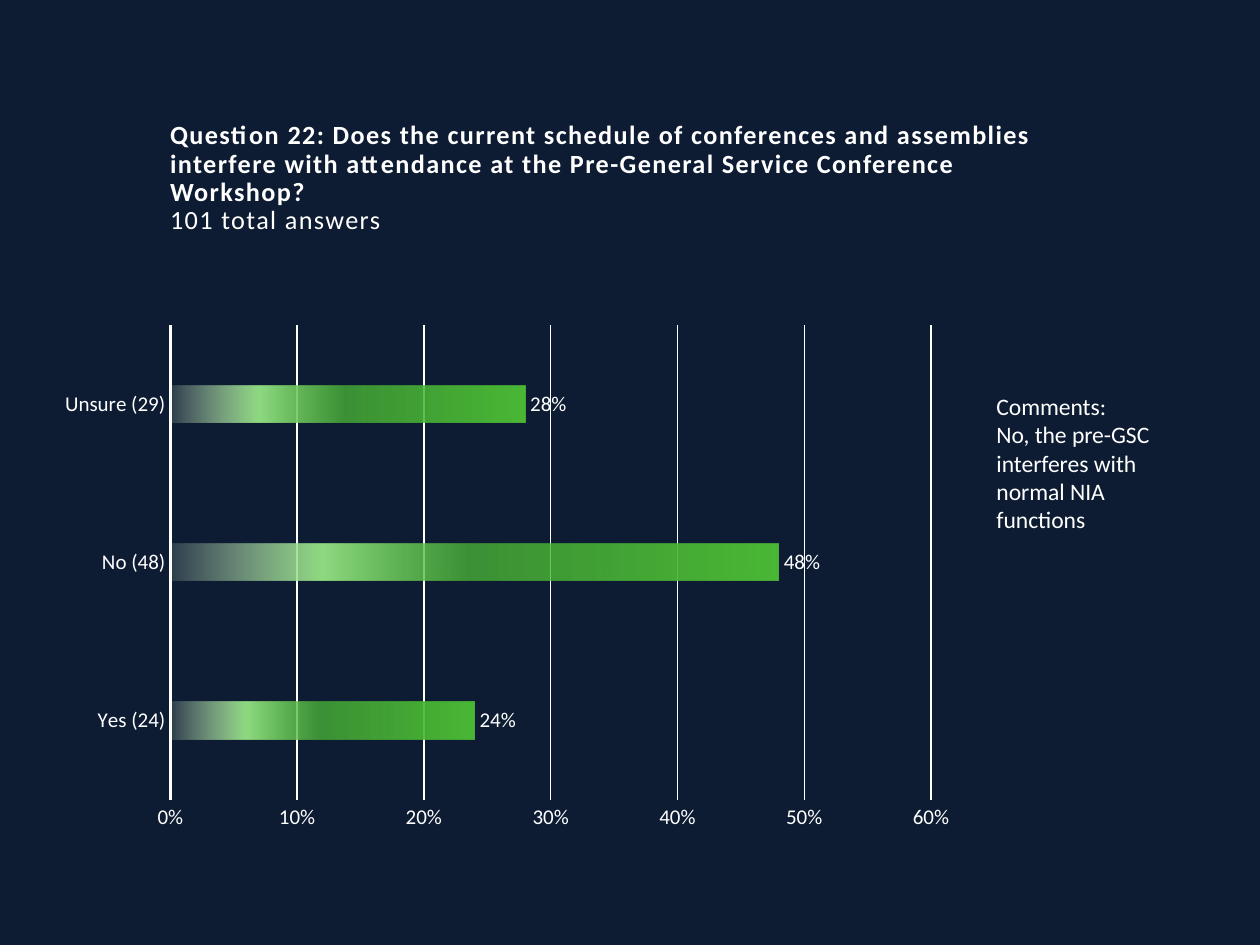
"""Build a survey slide with a question title, a bar chart of answers and comments."""
import copy
from dataclasses import dataclass

import lxml.etree
import pptx
import pptx.chart.data
import pptx.dml.color
import pptx.enum.chart
import pptx.enum.text
import pptx.oxml
import pptx.oxml.ns
import pptx.util

QUESTION = ("Question 22: Does the current schedule of conferences and assemblies "
            "interfere with attendance at the Pre-General Service Conference Workshop? ")
TOTAL = "101 total answers"
ANSWERS = [("Yes (24)", 0.24), ("No (48)", 0.48), ("Unsure (29)", 0.28)]
COMMENTS = ["Comments:", "No, the pre-GSC interferes with normal NIA functions"]

WIDTH, HEIGHT = 10, 7.5
TITLE_BOX = (0.125, 0.056, 0.75, 0.2)
CHART_BOX = (0.037, 0.333, 0.731, 0.556)
COMMENT_BOX = (0.781, 0.408, 0.169, 0.165)


@dataclass(frozen=True)
class Theme:
    """Colours, type sizes and the bar gradient."""
    font: str = "Calibri"
    back: str = "0D1C32"
    ink: str = "FFFFFF"
    title: float = 15
    chart: float = 12
    comment: float = 13.5
    stops: tuple = ((0, "4BB836", 100), (51, "4BB836", 75),
                    (75, "8FDA81", 100), (100, "DAF3D5", 15))


THEME = Theme()


def rgb(value):
    """Return a colour object for a hex value."""
    return pptx.dml.color.RGBColor.from_string(value)


def place(box):
    """Turn shares of the slide into lengths."""
    return [pptx.util.Inches(share * side)
            for share, side in zip(box, (WIDTH, HEIGHT, WIDTH, HEIGHT))]


def style(font, size, bold=False):
    """Apply the theme font in one size."""
    font.name, font.size, font.bold = THEME.font, pptx.util.Pt(size), bold
    font.color.rgb = rgb(THEME.ink)


def draw_line(line, width):
    """Set a plain line in the ink colour."""
    line.color.rgb = rgb(THEME.ink)
    line.width = pptx.util.Pt(width)


def add_title(slide):
    """Fill and format the title placeholder."""
    sp = slide.shapes.title
    sp.left, sp.top, sp.width, sp.height = place(TITLE_BOX)
    tf = sp.text_frame
    tf.text = QUESTION + "\v" + TOTAL
    tf.auto_size = pptx.enum.text.MSO_AUTO_SIZE.NONE
    tf.vertical_anchor = pptx.enum.text.MSO_ANCHOR.BOTTOM
    p = tf.paragraphs[0]
    p.alignment = pptx.enum.text.PP_ALIGN.LEFT
    p.line_spacing = 0.9
    for r, bold in zip(p.runs, (True, False)):
        style(r.font, THEME.title, bold)
        r.font._element.set("spc", "80")
    br = p._p.find(pptx.oxml.ns.qn("a:br"))
    br.insert(0, copy.deepcopy(p.runs[0].font._element))


def fill_gradient(series):
    """Give the bars a right-to-left gradient with transparency."""
    series.format.fill.solid()
    pr = series.format.fill._xPr
    solid = pr.find(pptx.oxml.ns.qn("a:solidFill"))
    stops = "".join(
        f'<a:gs pos="{pos * 1000}"><a:srgbClr val="{color}">'
        f'<a:alpha val="{alpha * 1000}"/></a:srgbClr></a:gs>'
        for pos, color, alpha in THEME.stops)
    grad = pptx.oxml.parse_xml(
        f'<a:gradFill {pptx.oxml.ns.nsdecls("a")} rotWithShape="1"><a:gsLst>{stops}</a:gsLst>'
        '<a:lin ang="10800000" scaled="0"/></a:gradFill>')
    pr.replace(solid, grad)


def add_answers(slide):
    """Add the bar chart of answers."""
    kinds = pptx.enum.chart
    data = pptx.chart.data.CategoryChartData(number_format="0%")
    data.categories = [name for name, _ in ANSWERS]
    data.add_series("Series 1", [share for _, share in ANSWERS])
    chart = slide.shapes.add_chart(
        kinds.XL_CHART_TYPE.BAR_CLUSTERED, *place(CHART_BOX), data).chart
    chart.has_legend = chart.has_title = False
    style(chart.font, THEME.chart)

    plot = chart.plots[0]
    plot.gap_width, plot.overlap, plot.vary_by_categories = 326, -58, False
    fill_gradient(plot.series[0])
    plot.has_data_labels = True
    labels = plot.data_labels
    labels.show_value = True
    labels.number_format, labels.number_format_is_linked = "0%", False
    labels.position = kinds.XL_LABEL_POSITION.OUTSIDE_END
    style(labels.font, THEME.chart)

    names, shares = chart.category_axis, chart.value_axis
    for axis in (names, shares):
        axis.major_tick_mark = axis.minor_tick_mark = kinds.XL_TICK_MARK.NONE
        style(axis.tick_labels.font, THEME.chart)
    names.has_major_gridlines = False
    draw_line(names.format.line, 1.5)
    shares.minimum_scale, shares.maximum_scale, shares.major_unit = 0, 0.6, 0.1
    shares.tick_labels.number_format = "0%"
    shares.tick_labels.number_format_is_linked = False
    shares.format.line.fill.background()
    shares.has_major_gridlines = True
    draw_line(shares.major_gridlines.format.line, 0.75)


def add_comments(slide):
    """Add the comments beside the chart."""
    tf = slide.shapes.add_textbox(*place(COMMENT_BOX)).text_frame
    tf.word_wrap = True
    tf.auto_size = pptx.enum.text.MSO_AUTO_SIZE.SHAPE_TO_FIT_TEXT
    tf.text = "\n".join(COMMENTS)
    for p in tf.paragraphs:
        style(p.runs[0].font, THEME.comment)


def main():
    """Build and save the slide."""
    prs = pptx.Presentation()
    prs.slide_width, prs.slide_height = pptx.util.Inches(WIDTH), pptx.util.Inches(HEIGHT)
    slide = prs.slides.add_slide(prs.slide_layouts[5])
    slide.background.fill.solid()
    slide.background.fill.fore_color.rgb = rgb(THEME.back)
    add_title(slide)
    add_answers(slide)
    add_comments(slide)
    prs.save("out.pptx")


if __name__ == "__main__":
    main()
